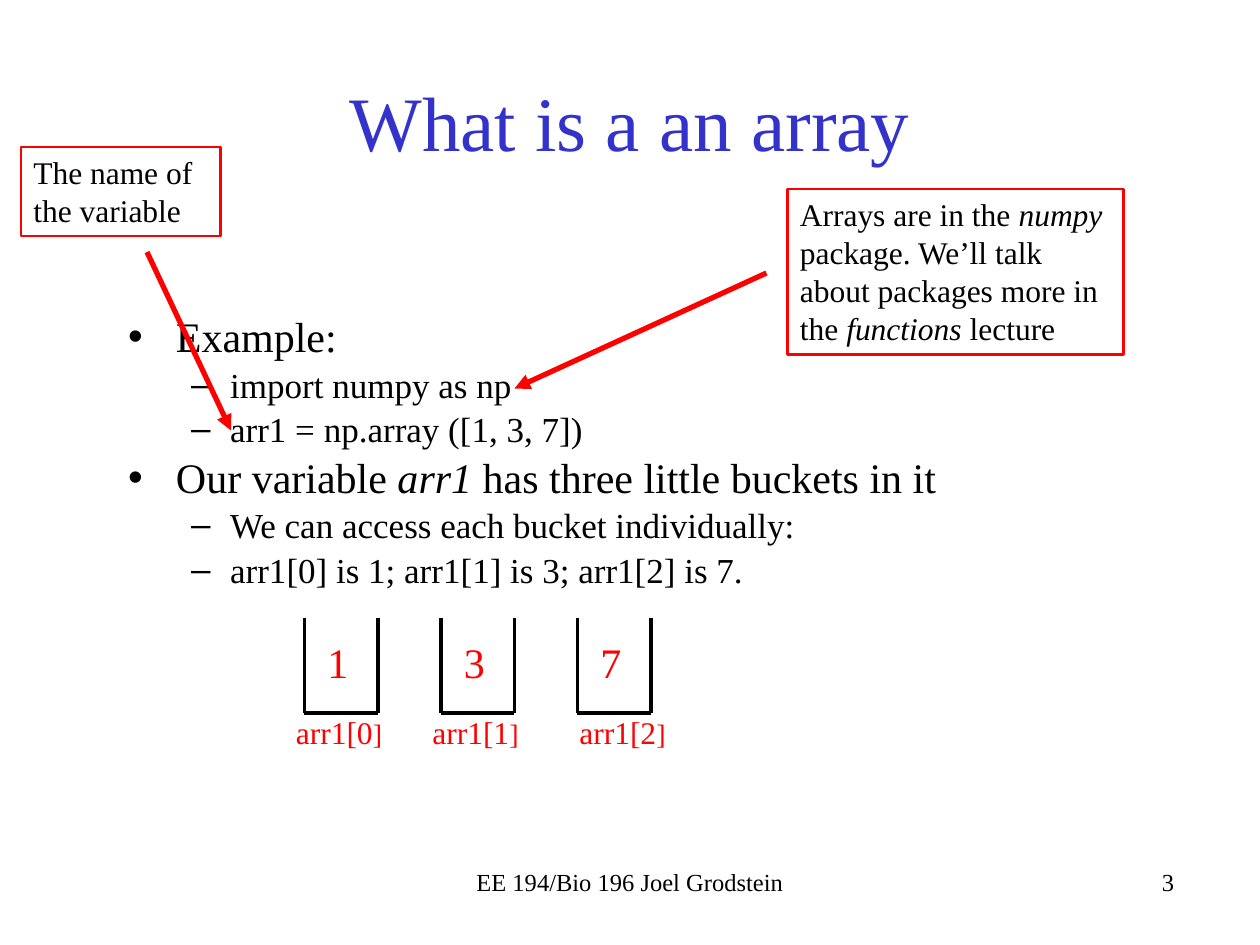
from dataclasses import dataclass

from lxml import etree
from pptx import Presentation
from pptx.dml.color import RGBColor
from pptx.enum.shapes import MSO_CONNECTOR, MSO_SHAPE
from pptx.enum.text import MSO_ANCHOR, MSO_AUTO_SIZE, PP_ALIGN
from pptx.oxml.ns import qn
from pptx.util import Inches, Pt

STRAIGHT, RECTANGLE = MSO_CONNECTOR.STRAIGHT, MSO_SHAPE.RECTANGLE
TOP, MIDDLE = MSO_ANCHOR.TOP, MSO_ANCHOR.MIDDLE
LEFT, CENTER, RIGHT = PP_ALIGN.LEFT, PP_ALIGN.CENTER, PP_ALIGN.RIGHT
FIXED = MSO_AUTO_SIZE.NONE
COLUMNS, ROWS = 120, 90


@dataclass(frozen=True)
class Theme:
    font: str = "Times New Roman"
    ink: RGBColor = RGBColor(0, 0, 0)
    heading: RGBColor = RGBColor(0x33, 0x33, 0xCC)
    accent: RGBColor = RGBColor(0xFF, 0, 0)
    title: int = 44
    level_sizes: tuple = (24, 20)
    level_indents: tuple = ((0.38, -0.38), (0.81, -0.31))
    callout: int = 18
    bracket: int = 16
    footer: int = 14
    outline: float = 1.5
    arrow: float = 3
    wall: float = 2.25


class Deck:
    def __init__(self, theme):
        self.theme = theme
        self.presentation = Presentation()
        self.presentation.slide_width = Inches(10)
        self.presentation.slide_height = Inches(7.5)
        self.column = self.presentation.slide_width / COLUMNS
        self.row = self.presentation.slide_height / ROWS
        self.slide = self.presentation.slides.add_slide(self.presentation.slide_layouts[1])

    def area(self, left, top, width, height):
        return (round(left * self.column), round(top * self.row),
                round(width * self.column), round(height * self.row))

    def place(self, element, area):
        for side, length in zip(("left", "top", "width", "height"), self.area(*area)):
            setattr(element, side, length)

    def frame(self, element, anchor=TOP):
        settings = {"word_wrap": True, "auto_size": FIXED, "vertical_anchor": anchor}
        for setting, value in settings.items():
            setattr(element.text_frame, setting, value)
        return element.text_frame

    def fill_in(self, paragraph, parts, size, color, align=LEFT):
        paragraph.alignment = align
        for words, changes in parts:
            run = paragraph.add_run()
            run.text = words
            run.font.color.rgb = color
            style = {"name": self.theme.font, "size": Pt(size), **changes}
            for setting, value in style.items():
                setattr(run.font, setting, value)

    def title(self, words, area):
        heading = self.slide.shapes.title
        self.place(heading, area)
        self.fill_in(self.frame(heading, MIDDLE).paragraphs[0], [(words, {})],
                     self.theme.title, self.theme.heading, CENTER)

    def bullets(self, items, area):
        body = self.slide.placeholders[1]
        self.place(body, area)
        frame = self.frame(body)
        for index, (level, parts) in enumerate(items):
            paragraph = frame.add_paragraph() if index else frame.paragraphs[0]
            paragraph.level = level
            paragraph.space_before = Pt(1.2)
            margin, indent = self.theme.level_indents[level]
            properties = paragraph._p.get_or_add_pPr()
            properties.set("marL", str(Inches(margin)))
            properties.set("indent", str(Inches(indent)))
            self.fill_in(paragraph, parts, self.theme.level_sizes[level], self.theme.ink)

    def text(self, parts, area, size, color, align=LEFT):
        box = self.slide.shapes.add_textbox(*self.area(*area))
        self.fill_in(self.frame(box).paragraphs[0], parts, size, color, align)

    def callout(self, parts, area):
        box = self.slide.shapes.add_shape(RECTANGLE, *self.area(*area))
        box.shadow.inherit = False
        box.fill.background()
        box.line.color.rgb = self.theme.accent
        box.line.width = Pt(self.theme.outline)
        self.fill_in(self.frame(box).paragraphs[0], parts, self.theme.callout, self.theme.ink)

    def line(self, start, end, color, weight):
        ends = self.area(*start, *end)
        connector = self.slide.shapes.add_connector(STRAIGHT, *ends)
        connector.line.color.rgb = color
        connector.line.width = Pt(weight)
        etree.SubElement(connector._element.spPr, qn("a:effectLst"))
        return connector

    def arrow(self, start, end):
        connector = self.line(start, end, self.theme.accent, self.theme.arrow)
        outline = connector._element.spPr.find(qn("a:ln"))
        etree.SubElement(outline, qn("a:tailEnd"), type="triangle")

    def bucket(self, index, value, left, label_left):
        top, bottom, right = 58.9, 67.9, left + 7
        walls = (((left, bottom), (right, bottom)),
                 ((left, top), (left, bottom)),
                 ((right, top), (right, bottom)))
        for start, end in walls:
            self.line(start, end, self.theme.ink, self.theme.wall)
        self.text([(value, {})], (left + 1, 60, 6, 6),
                  self.theme.level_sizes[0], self.theme.accent)
        label = [(f"arr1[{index}", {}), ("]", {"size": Pt(self.theme.bracket)})]
        self.text(label, (label_left, 67.3, 11, 4.8), self.theme.callout, self.theme.accent)


def main():
    theme = Theme()
    deck = Deck(theme)
    italic = {"italic": True}

    deck.text([("3", {})], (75, 82, 38, 6), theme.footer, theme.ink, RIGHT)
    deck.text([("EE 194/Bio 196 Joel Grodstein", {})], (41, 82, 38, 6),
              theme.footer, theme.ink, CENTER)
    deck.title("What is a an array", (9, 4, 102, 15))
    deck.bullets([
        (0, [("Example:", {})]),
        (1, [("import numpy as np", {})]),
        (1, [("arr1 = np.array ([1, 3, 7])", {})]),
        (0, [("Our variable ", {}), ("arr1 ", italic),
             ("has three little buckets in it", {})]),
        (1, [("We can access each bucket individually:", {})]),
        (1, [("arr1[0] is 1; arr1[1] is 3; arr1[2] is 7.", {})]),
    ], (11, 29, 102, 29.9))

    deck.callout([("Arrays are in the ", {}), ("numpy", italic),
                  (" package. We’ll talk about packages more in the ", {}),
                  ("functions ", italic), ("lecture", {})], (75, 18, 32, 15.8))
    deck.arrow((73, 26), (49, 37))
    deck.callout([("The name of the variable", {})], (2, 14, 19, 8.5))
    deck.arrow((14, 24), (22, 41))

    for index, (value, label_left) in enumerate((("1", 27), ("3", 40), ("7", 54))):
        deck.bucket(index, value, 29 + 13 * index, label_left)

    deck.presentation.save("out.pptx")


if __name__ == "__main__":
    main()
